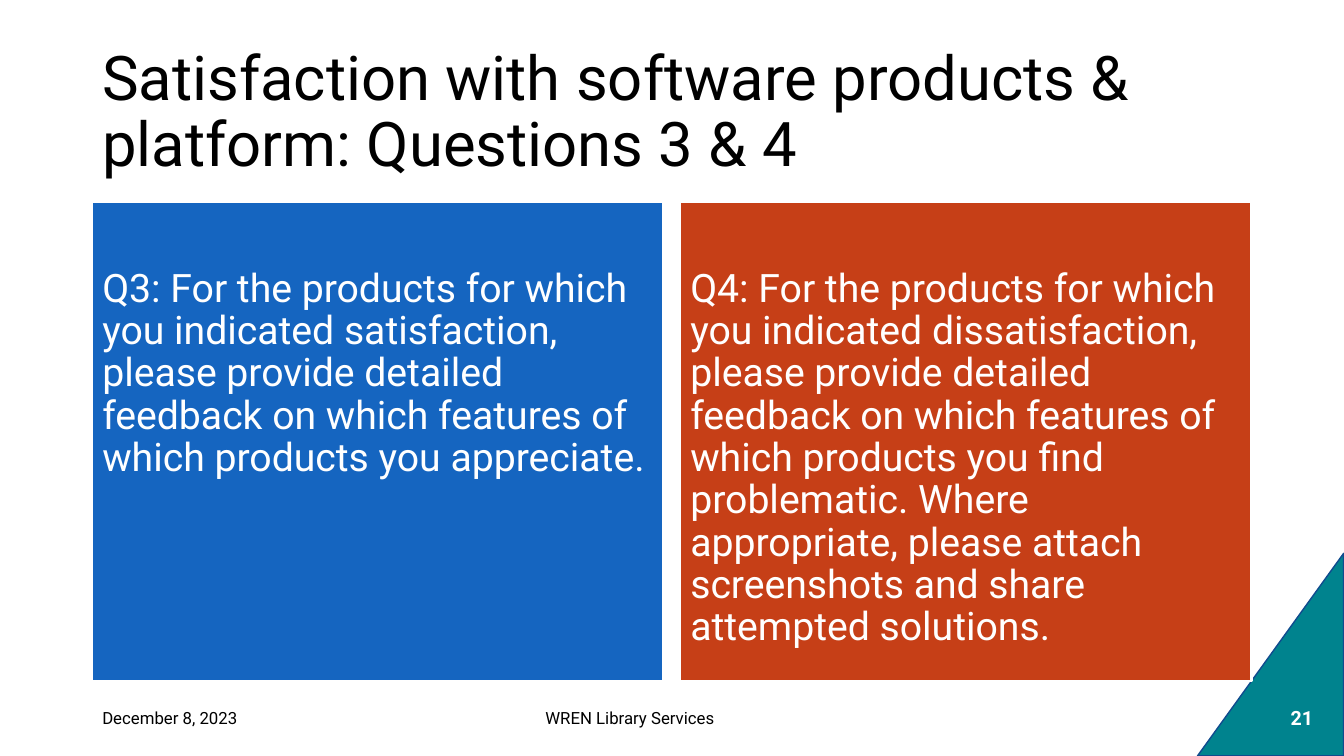
from dataclasses import dataclass

from pptx import Presentation
from pptx.dml.color import RGBColor
from pptx.enum.shapes import MSO_SHAPE
from pptx.enum.text import MSO_ANCHOR, PP_ALIGN
from pptx.util import Pt

RECT, CORNER = MSO_SHAPE.RECTANGLE, MSO_SHAPE.RIGHT_TRIANGLE
TOP, MIDDLE = MSO_ANCHOR.TOP, MSO_ANCHOR.MIDDLE
LEFT, CENTER = PP_ALIGN.LEFT, PP_ALIGN.CENTER


@dataclass(frozen=True)
class Theme:
    font: str = "Roboto"
    black: str = "000000"
    white: str = "FFFFFF"
    blue: str = "1565C0"
    red: str = "C63F17"
    teal: str = "00838E"
    navy: str = "104B8E"
    title: int = 44
    body: int = 28
    page: int = 14
    foot: int = 12


THEME = Theme()
MARGIN = 66
CARD_W, CARD_GAP = 408, 12
FOOT_TOP, FOOT_H = 498, 29

CARDS = [
    (THEME.blue,
     "Q3: For the products for which you indicated satisfaction, please provide "
     "detailed feedback on which features of which products you appreciate."),
    (THEME.red,
     "Q4: For the products for which you indicated dissatisfaction, please provide "
     "detailed feedback on which features of which products you find problematic. "
     "Where appropriate, please attach screenshots and share attempted solutions."),
]


def write(shape, text, size, color, align=LEFT, anchor=MIDDLE, bold=False, pitch=None):
    frame = shape.text_frame
    frame.word_wrap = True
    frame.vertical_anchor = anchor
    para = frame.paragraphs[0]
    para.alignment = align
    if pitch:
        para.line_spacing = pitch
    run = para.add_run()
    run.text = text
    run.font.name = THEME.font
    run.font.size = Pt(size)
    run.font.bold = bold
    run.font.color.rgb = RGBColor.from_string(color)


def add_text(slide, box, text, size, color=THEME.black, **style):
    shape = slide.shapes.add_textbox(*map(Pt, box))
    write(shape, text, size, color, **style)


def add_block(slide, kind, box, fill, line, width):
    shape = slide.shapes.add_shape(kind, *map(Pt, box))
    shape.shadow.inherit = False
    shape.fill.solid()
    shape.fill.fore_color.rgb = RGBColor.from_string(fill)
    shape.line.color.rgb = RGBColor.from_string(line)
    shape.line.width = Pt(width)
    return shape


def add_card(slide, left, fill, text):
    card = add_block(slide, RECT, (left, 144, CARD_W, 342.5), fill, THEME.white, 1.5)
    card.text_frame.margin_top = Pt(47.5)
    write(card, text, THEME.body, THEME.white, anchor=TOP, pitch=0.9)


def main():
    deck = Presentation()
    deck.slide_width, deck.slide_height = Pt(960), Pt(540)
    slide = deck.slides.add_slide(deck.slide_layouts[6])

    # Corner triangle
    corner = add_block(slide, CORNER, (835.2, 415.4, 144.7, 104.4),
                       THEME.teal, THEME.navy, 1)
    corner.rotation = 270

    # Title
    add_text(slide, (MARGIN, 28.8, 828, 104.4),
             "Satisfaction with software products & platform: Questions 3 & 4",
             THEME.title, pitch=0.9)

    # Question cards
    for i, (fill, text) in enumerate(CARDS):
        add_card(slide, MARGIN + i * (CARD_W + CARD_GAP), fill, text)

    # Footer
    add_text(slide, (MARGIN, FOOT_TOP, 216, FOOT_H), "December 8, 2023", THEME.foot)
    add_text(slide, (288, FOOT_TOP, 324, FOOT_H), "WREN Library Services",
             THEME.foot, align=CENTER)
    add_text(slide, (909, FOOT_TOP, 42, FOOT_H), "21", THEME.page, THEME.white,
             align=CENTER, bold=True)

    deck.save("out.pptx")


if __name__ == "__main__":
    main()
